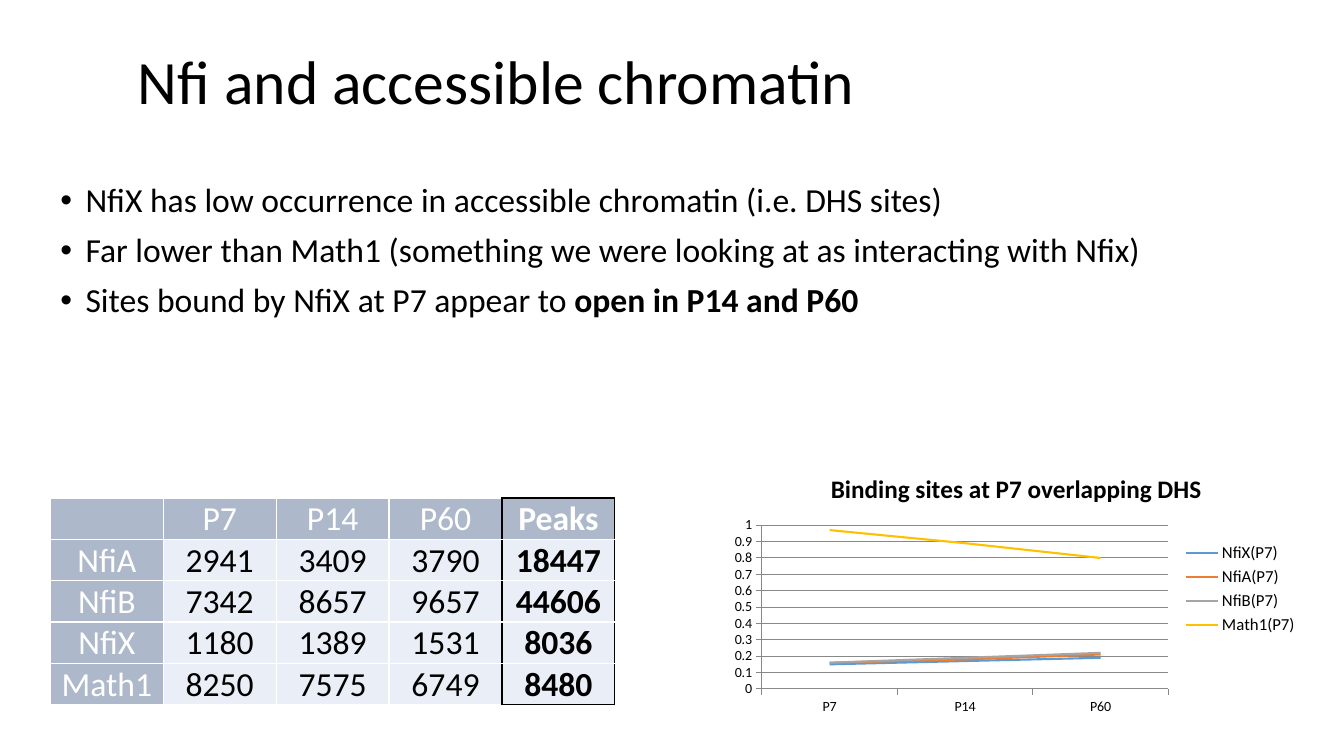
from lxml.etree import SubElement
from pptx import Presentation
from pptx.chart.data import CategoryChartData
from pptx.dml.color import RGBColor
from pptx.enum.chart import XL_CHART_TYPE, XL_LEGEND_POSITION, XL_TICK_MARK
from pptx.enum.text import MSO_ANCHOR, PP_ALIGN
from pptx.oxml import parse_xml
from pptx.oxml.ns import nsdecls, qn
from pptx.util import Inches, Pt

FONT = "Calibri"
BLACK = RGBColor(0x00, 0x00, 0x00)
WHITE = RGBColor(0xFF, 0xFF, 0xFF)
HEADER = RGBColor(0xAD, 0xB9, 0xCA)
BODY = RGBColor(0xEA, 0xEF, 0xF7)
GRID = RGBColor(0x88, 0x88, 0x88)

TITLE = "Nfi and accessible chromatin"
BULLETS = [
    [("NfiX has low occurrence in accessible chromatin (i.e. DHS sites)", False)],
    [("Far lower than Math1 (something we were looking at as interacting with Nfix)", False)],
    [("Sites bound by NfiX at P7 appear to ", False), ("open in P14 and P60", True)],
]
PEAKS = [
    ("", "P7", "P14", "P60", "Peaks"),
    ("NfiA", "2941", "3409", "3790", "18447"),
    ("NfiB", "7342", "8657", "9657", "44606"),
    ("NfiX", "1180", "1389", "1531", "8036"),
    ("Math1", "8250", "7575", "6749", "8480"),
]
CHART_TITLE = "Binding sites at P7 overlapping DHS"
AGES = ["P7", "P14", "P60"]
SERIES = [
    ("NfiX(P7)", (0.15, 0.17, 0.19), RGBColor(0x5B, 0x9B, 0xD5)),
    ("NfiA(P7)", (0.16, 0.18, 0.21), RGBColor(0xED, 0x7D, 0x31)),
    ("NfiB(P7)", (0.16, 0.19, 0.22), RGBColor(0xA5, 0xA5, 0xA5)),
    ("Math1(P7)", (0.97, 0.89, 0.8), RGBColor(0xFF, 0xC0, 0x00)),
]
PLOT = {"x": 0.065, "y": 0.26, "w": 0.695, "h": 0.62}


def add_run(p, text, size=24, bold=False, color=BLACK):
    r = p.add_run()
    r.text = text
    r.font.name = FONT
    r.font.size = Pt(size)
    r.font.bold = bold
    r.font.color.rgb = color


def add_text_frame(s, left, top, width, height, anchor):
    tf = s.shapes.add_textbox(Inches(left), Inches(top), Inches(width), Inches(height)).text_frame
    tf.word_wrap = True
    tf.vertical_anchor = anchor
    return tf


def add_bullet(p):
    pPr = p._p.get_or_add_pPr()
    pPr.set("marL", str(Inches(0.25)))
    pPr.set("indent", str(-Inches(0.25)))
    SubElement(pPr, qn("a:buFont"), typeface="Arial")
    SubElement(pPr, qn("a:buChar"), char="•")


def set_borders(cell, colors):
    tcPr = cell._tc.get_or_add_tcPr()
    for i, (side, color) in enumerate(zip("LRTB", colors)):
        tcPr.insert(i, parse_xml(
            f'<a:ln{side} {nsdecls("a")} w="12700"><a:solidFill>'
            f'<a:srgbClr val="{color}"/></a:solidFill></a:ln{side}>'))


def add_peaks_table(s):
    rows, cols = len(PEAKS), len(PEAKS[0])
    table = s.shapes.add_table(rows, cols, Inches(0.5), Inches(4.94),
                               Inches(1.12 * cols), Inches(0.41 * rows)).table
    for row in table.rows:
        row.height = Inches(0.41)
    for i, values in enumerate(PEAKS):
        for j, value in enumerate(values):
            is_header = i == 0 or j == 0
            is_peaks = j == cols - 1
            cell = table.cell(i, j)
            cell.margin_left = cell.margin_right = cell.margin_top = Inches(0.01)
            cell.margin_bottom = 0
            cell.vertical_anchor = MSO_ANCHOR.MIDDLE
            cell.fill.solid()
            cell.fill.fore_color.rgb = HEADER if is_header else BODY
            framed = (is_peaks, j >= cols - 2, is_peaks and i == 0, is_peaks and i == rows - 1)
            set_borders(cell, [BLACK if edge else WHITE for edge in framed])
            if value:
                p = cell.text_frame.paragraphs[0]
                p.alignment = PP_ALIGN.CENTER
                add_run(p, value, bold=is_peaks, color=WHITE if is_header else BLACK)


def add_binding_chart(s):
    data = CategoryChartData(number_format="General")
    data.categories = AGES
    for name, values, _ in SERIES:
        data.add_series(name, values)
    chart = s.shapes.add_chart(XL_CHART_TYPE.LINE, Inches(7.18), Inches(4.53),
                               Inches(5.8), Inches(2.62), data).chart
    chart.font.name = FONT
    chart.font.size = Pt(10)
    chart.font.color.rgb = BLACK
    chart.has_title = True
    add_run(chart.chart_title.text_frame.paragraphs[0], CHART_TITLE, size=18, bold=True)
    chart.chart_title.include_in_layout = False

    chart.has_legend = True
    chart.legend.position = XL_LEGEND_POSITION.RIGHT
    chart.legend.include_in_layout = False
    chart.legend.font.name = FONT
    chart.legend.font.size = Pt(12)
    chart.legend.font.color.rgb = BLACK

    for axis in (chart.category_axis, chart.value_axis):
        axis.major_tick_mark = XL_TICK_MARK.OUTSIDE
        axis.format.line.color.rgb = GRID
    axis = chart.value_axis
    axis.minimum_scale, axis.maximum_scale, axis.major_unit = 0, 1, 0.1
    axis.has_major_gridlines = True
    axis.major_gridlines.format.line.color.rgb = GRID

    plot = chart.plots[0]
    plot.vary_by_categories = False
    for series, (_, _, color) in zip(plot.series, SERIES):
        series.smooth = False
        series.format.line.width = Pt(1.5)
        series.format.line.color.rgb = color

    area = chart._chartSpace.chart.plotArea
    for layout in area.findall(qn("c:layout")):
        area.remove(layout)
    places = "".join(f'<c:{key} val="{value}"/>' for key, value in PLOT.items())
    area.insert(0, parse_xml(
        f'<c:layout {nsdecls("c")}><c:manualLayout><c:layoutTarget val="inner"/>'
        f'<c:xMode val="edge"/><c:yMode val="edge"/>{places}</c:manualLayout></c:layout>'))


def main():
    prs = Presentation()
    prs.slide_width, prs.slide_height = Inches(13.33), Inches(7.5)
    s = prs.slides.add_slide(prs.slide_layouts[6])

    p = add_text_frame(s, 1.27, 0.4, 10.8, 0.87, MSO_ANCHOR.MIDDLE).paragraphs[0]
    p.line_spacing = 0.9
    add_run(p, TITLE, size=44)

    tf = add_text_frame(s, 0.5, 1.77, 12.21, 2.76, MSO_ANCHOR.TOP)
    for i, runs in enumerate(BULLETS):
        p = tf.add_paragraph() if i else tf.paragraphs[0]
        p.line_spacing = 0.9
        p.space_before = Pt(10)
        add_bullet(p)
        for text, bold in runs:
            add_run(p, text, bold=bold)

    add_peaks_table(s)
    add_binding_chart(s)
    prs.save("out.pptx")


if __name__ == "__main__":
    main()
